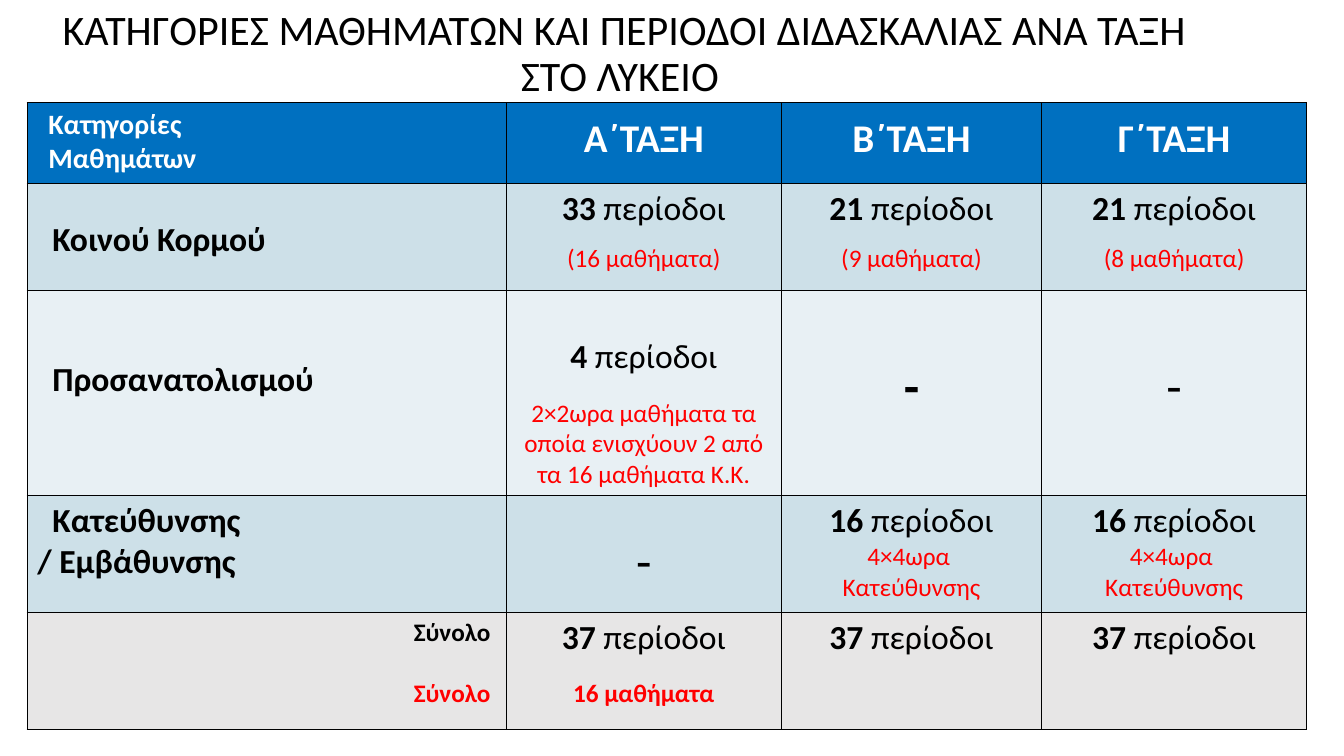
from collections import namedtuple
from dataclasses import dataclass

from lxml.etree import SubElement
from pptx import Presentation
from pptx.dml.color import RGBColor
from pptx.enum.text import MSO_ANCHOR, MSO_AUTO_SIZE, PP_ALIGN
from pptx.oxml.ns import qn
from pptx.util import Emu, Inches, Pt

Box = namedtuple("Box", "left top width height")
Span = namedtuple("Span", "text style")
Line = namedtuple("Line", "spans before indent", defaults=(0, 0))
Entry = namedtuple("Entry", "lines top", defaults=(0.05,))


@dataclass(frozen=True)
class Theme:
    font: str = "Calibri"
    black: str = "000000"
    white: str = "FFFFFF"
    red: str = "FF0000"
    fills: tuple = ("0070C0", "CDE0E8", "E8F0F4", "CDE0E8", "E7E6E6")
    title: int = 30
    dash: int = 36
    heading: int = 28
    body: int = 24
    corner: int = 20
    note: int = 18
    border: int = 1


THEME = Theme()

# Text styles: size, colour, bold
STYLES = {
    "title": (THEME.title, THEME.black, False),
    "corner": (THEME.corner, THEME.white, True),
    "heading": (THEME.heading, THEME.white, True),
    "strong": (THEME.body, THEME.black, True),
    "plain": (THEME.body, THEME.black, False),
    "note": (THEME.note, THEME.red, False),
    "note_strong": (THEME.note, THEME.red, True),
    "total": (THEME.note, THEME.black, True),
    "dash": (THEME.dash, THEME.black, False),
    "dash_strong": (THEME.dash, THEME.black, True),
}

# Boxes as percentages of the slide
TITLE_BOX = Box(2.7, 0, 87.55, 14.53)
TABLE_BOX = Box(2.03, 13.6, 95.2, 82.8)
COLUMN_SHARES = (4.75, 2.73, 2.58, 2.63)
ROW_SHARES = (0.8, 1.06, 2.03, 1.16, 1.16)

TITLE = "ΚΑΤΗΓΟΡΙΕΣ ΜΑΘΗΜΑΤΩΝ ΚΑΙ ΠΕΡΙΟΔΟΙ ΔΙΔΑΣΚΑΛΙΑΣ ΑΝΑ ΤΑΞΗ ΣΤΟ ΛΥΚΕΙΟ "


def line(text, style, before=0, indent=0):
    return Line([Span(text, style)], before, indent)


def periods(count):
    return Line([Span(count, "strong"), Span(" περίοδοι", "plain")])


def common(count, lessons):
    return Entry([periods(count), line(f"({lessons} μαθήματα)", "note", 10)])


def category(text, top=0.05):
    return Entry([line(text, "strong", indent=0.15)], top)


DIRECTION = Entry([periods("16"), line("4×4ωρα ", "note"), line("Κατεύθυνσης", "note")])
TOTAL = Entry([periods("37")])

ROWS = [
    [Entry([line(word, "corner", indent=0.11) for word in ("Κατηγορίες", "Μαθημάτων")])]
    + [Entry([line(f"{grade}΄ΤΑΞΗ", "heading")], 0.12) for grade in "ΑΒΓ"],
    [category("Κοινού Κορμού", 0.36), common("33", 16), common("21", 9), common("21", 8)],
    [
        category("Προσανατολισμού", 0.69),
        Entry([periods("4"),
               line("2×2ωρα μαθήματα τα οποία ενισχύουν 2 από τα 16 μαθήματα Κ.Κ.", "note", 14.6)],
              0.46),
        Entry([line("-", "dash_strong")], 0.66),
        Entry([line("-", "dash")], 0.66),
    ],
    [
        Entry([*category("Κατεύθυνσης").lines, line("/ Εμβάθυνσης", "strong")]),
        Entry([line("-", "dash")], 0.36),
        DIRECTION,
        DIRECTION,
    ],
    [
        Entry([line("Σύνολο ", "total"), line("Σύνολο ", "note_strong", 22)]),
        Entry([periods("37"), line("16 μαθήματα", "note_strong", 14.6)]),
        TOTAL,
        TOTAL,
    ],
]


def scaled(deck, box):
    """Turn a box in percentages into slide lengths."""
    sides = (deck.slide_width, deck.slide_height) * 2
    return Box(*(Emu(round(share * side / 100)) for share, side in zip(box, sides)))


def set_all(target, values):
    for name, value in values.items():
        setattr(target, name, value)


def write_lines(frame, lines, align):
    for number, entry in enumerate(lines):
        para = frame.add_paragraph() if number else frame.paragraphs[0]
        set_all(para, {"alignment": align, "space_before": Pt(entry.before)})
        if entry.indent:
            para._p.get_or_add_pPr().set("marL", str(Inches(entry.indent)))
        for span in entry.spans:
            size, color, bold = STYLES[span.style]
            run = para.add_run()
            run.text = span.text
            set_all(run.font, {"name": THEME.font, "size": Pt(size), "bold": bold})
            run.font.color.rgb = RGBColor.from_string(color)


def draw_borders(cell):
    properties = cell._tc.get_or_add_tcPr()
    for side in ("lnL", "lnR", "lnT", "lnB"):
        edge = SubElement(properties, qn(f"a:{side}"), w=str(Pt(THEME.border)))
        fill = SubElement(edge, qn("a:solidFill"))
        SubElement(fill, qn("a:srgbClr"), val=THEME.black)


def add_title(page, box):
    title = page.shapes.title
    set_all(title, box._asdict())
    frame = title.text_frame
    set_all(frame, {"word_wrap": True, "auto_size": MSO_AUTO_SIZE.NONE,
                    "vertical_anchor": MSO_ANCHOR.MIDDLE})
    write_lines(frame, [line(TITLE, "title")], PP_ALIGN.CENTER)
    frame.paragraphs[0].line_spacing = 0.9


def add_periods_table(page, box):
    table = page.shapes.add_table(len(ROWS), len(COLUMN_SHARES), *box).table
    set_all(table, {"first_row": False, "horz_banding": False})
    for column, share in zip(table.columns, COLUMN_SHARES):
        column.width = Emu(round(box.width * share / sum(COLUMN_SHARES)))
    for row, share in zip(table.rows, ROW_SHARES):
        row.height = Emu(round(box.height * share / sum(ROW_SHARES)))

    for row_number, entries in enumerate(ROWS):
        for column_number, entry in enumerate(entries):
            cell = table.cell(row_number, column_number)
            cell.margin_top = Inches(entry.top)
            draw_borders(cell)
            cell.fill.solid()
            cell.fill.fore_color.rgb = RGBColor.from_string(THEME.fills[row_number])
            # Categories read from the left, the totals label from the right
            align = PP_ALIGN.CENTER
            if column_number == 0:
                align = PP_ALIGN.RIGHT if row_number == len(ROWS) - 1 else PP_ALIGN.LEFT
            write_lines(cell.text_frame, entry.lines, align)


def main():
    deck = Presentation()
    set_all(deck, {"slide_width": Inches(13.33), "slide_height": Inches(7.5)})
    page = deck.slides.add_slide(deck.slide_layouts.get_by_name("Title Only"))
    add_title(page, scaled(deck, TITLE_BOX))
    add_periods_table(page, scaled(deck, TABLE_BOX))
    deck.save("out.pptx")


if __name__ == "__main__":
    main()
